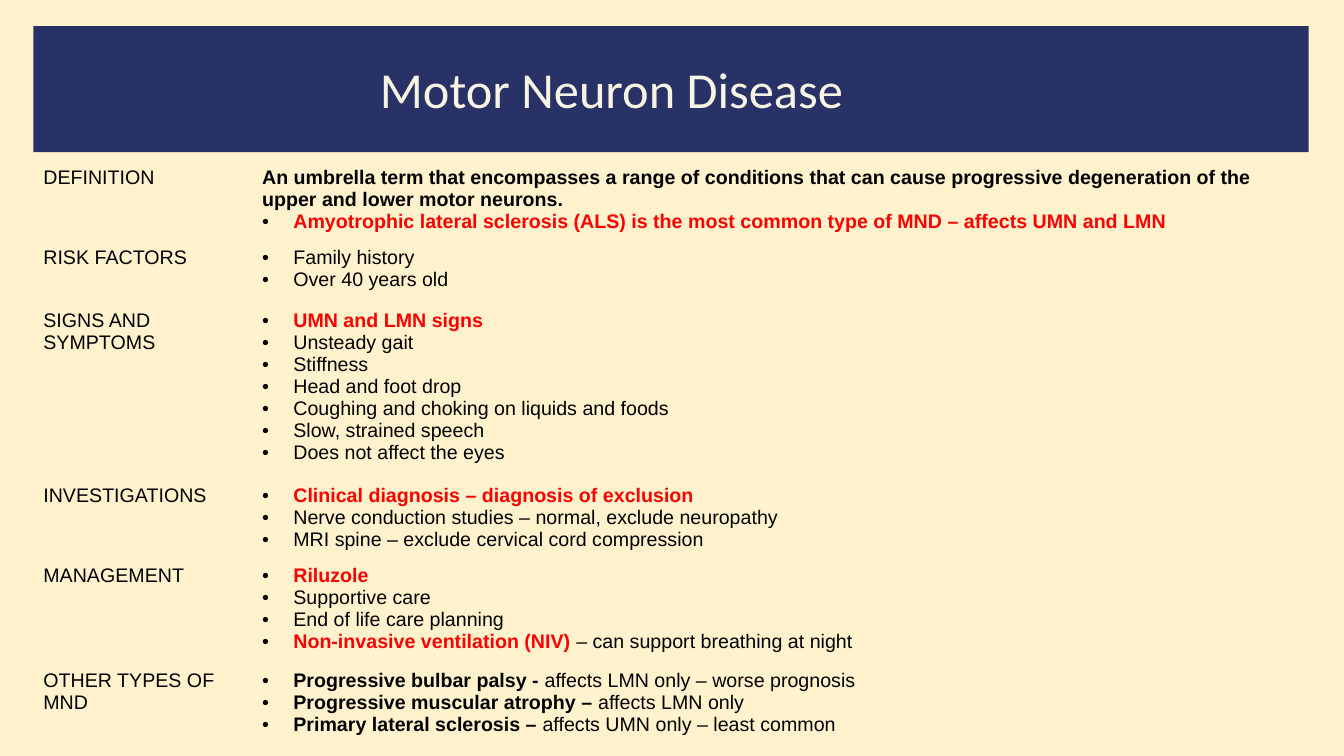
"""Build the Motor Neuron Disease summary slide."""
from lxml.etree import SubElement
from pptx import Presentation
from pptx.dml.color import RGBColor
from pptx.enum.shapes import MSO_SHAPE as Shape
from pptx.oxml.ns import qn
from pptx.util import Inches, Pt

WIDE, HIGH = 13.33, 7.5
CREAM, NAVY, IVORY, BLACK, RED = "FFF2CC", "293267", "F8F4E4", "000000", "FF0000"
LEFT, COLS = 0.33, (2.17, 10.47)
LINE, PAD, LEAST = 0.23, 0.11, 0.62
DENT = 0.31
NO_GRID = "{2D5ABB26-0587-4C30-8999-92F81FD0307C}"

TITLE = "Motor Neuron Disease"
INTRO = ("An umbrella term that encompasses a range of conditions that can cause "
         "progressive degeneration of the upper and lower motor neurons.")
PLAIN, BOLD, KEY = {}, {"bold": True}, {"bold": True, "color": RED}

ROWS = [
    ("DEFINITION", INTRO, [
        [("Amyotrophic lateral sclerosis (ALS) is the most common type of MND "
          "– affects UMN and LMN", KEY)],
    ]),
    ("RISK FACTORS", "", [
        [("Family history", PLAIN)],
        [("Over 40 years old", PLAIN)],
    ]),
    ("SIGNS AND SYMPTOMS", "", [
        [("UMN and LMN signs", KEY)],
        [("Unsteady gait", PLAIN)],
        [("Stiffness", PLAIN)],
        [("Head and foot drop", PLAIN)],
        [("Coughing and choking on liquids and foods", PLAIN)],
        [("Slow, strained speech", PLAIN)],
        [("Does not affect the eyes", PLAIN)],
    ]),
    ("INVESTIGATIONS", "", [
        [("Clinical diagnosis – diagnosis of exclusion", KEY)],
        [("Nerve conduction studies – normal, exclude neuropathy", PLAIN)],
        [("MRI spine – exclude cervical cord compression", PLAIN)],
    ]),
    ("MANAGEMENT", "", [
        [("Riluzole", KEY)],
        [("Supportive care", PLAIN)],
        [("End of life care planning", PLAIN)],
        [("Non-invasive ventilation (NIV) ", KEY),
         ("– can support breathing at night", PLAIN)],
    ]),
    ("OTHER TYPES OF MND", "", [
        [("Progressive bulbar palsy - ", BOLD), ("affects LMN only – worse prognosis", PLAIN)],
        [("Progressive muscular atrophy – ", BOLD), ("affects LMN only", PLAIN)],
        [("Primary lateral sclerosis – ", BOLD), ("affects UMN only – least common", PLAIN)],
    ]),
]


def paint(fill, color):
    fill.solid()
    fill.fore_color.rgb = RGBColor.from_string(color)


def write(para, text, size=14, font="Arial", color=BLACK, bold=False):
    run = para.add_run()
    run.text = text
    run.font.size, run.font.name, run.font.bold = Pt(size), font, bold
    run.font.color.rgb = RGBColor.from_string(color)


def bullet(para):
    props = para._p.get_or_add_pPr()
    props.set("marL", str(Inches(DENT)))
    props.set("indent", str(-Inches(DENT)))
    tint = SubElement(props, qn("a:buClr"))
    SubElement(tint, qn("a:srgbClr"), val=BLACK)
    SubElement(props, qn("a:buFont"), typeface="Arial")
    SubElement(props, qn("a:buChar"), char="•")


def add_title(slide):
    bar = slide.shapes.add_shape(
        Shape.RECTANGLE, Inches(LEFT), Inches(0.26), Inches(12.65), Inches(1.25))
    bar.shadow.inherit = False
    paint(bar.fill, NAVY)
    bar.line.fill.background()
    box = slide.shapes.add_textbox(Inches(3.67), Inches(0.53), Inches(6.53), Inches(0.71))
    box.text_frame.word_wrap = True
    write(box.text_frame.paragraphs[0], TITLE, size=36, font="Calibri", color=IVORY)


def add_facts(slide):
    highs = [max(LEAST, PAD + LINE * (len(items) + 2 * bool(intro)))
             for _, intro, items in ROWS]
    frame = slide.shapes.add_table(
        len(ROWS), len(COLS), Inches(LEFT), Inches(1.6),
        Inches(sum(COLS)), Inches(sum(highs)))
    table = frame.table
    table.first_row = table.horz_banding = False
    next(table._tbl.iter(qn("a:tableStyleId"))).text = NO_GRID
    for col, wide in zip(table.columns, COLS):
        col.width = Inches(wide)
    for row, high, (label, intro, items) in zip(table.rows, highs, ROWS):
        row.height = Inches(high)
        for cell in row.cells:
            cell.fill.background()
        head, body = (cell.text_frame for cell in row.cells)
        write(head.paragraphs[0], label)
        if intro:
            write(body.paragraphs[0], intro, bold=True)
        for num, item in enumerate(items):
            para = body.add_paragraph() if num or intro else body.paragraphs[0]
            bullet(para)
            for text, style in item:
                write(para, text, **style)


def main():
    deck = Presentation()
    deck.slide_width, deck.slide_height = Inches(WIDE), Inches(HIGH)
    slide = deck.slides.add_slide(deck.slide_layouts[6])
    paint(slide.background.fill, CREAM)
    add_title(slide)
    add_facts(slide)
    deck.save("out.pptx")


if __name__ == "__main__":
    main()
